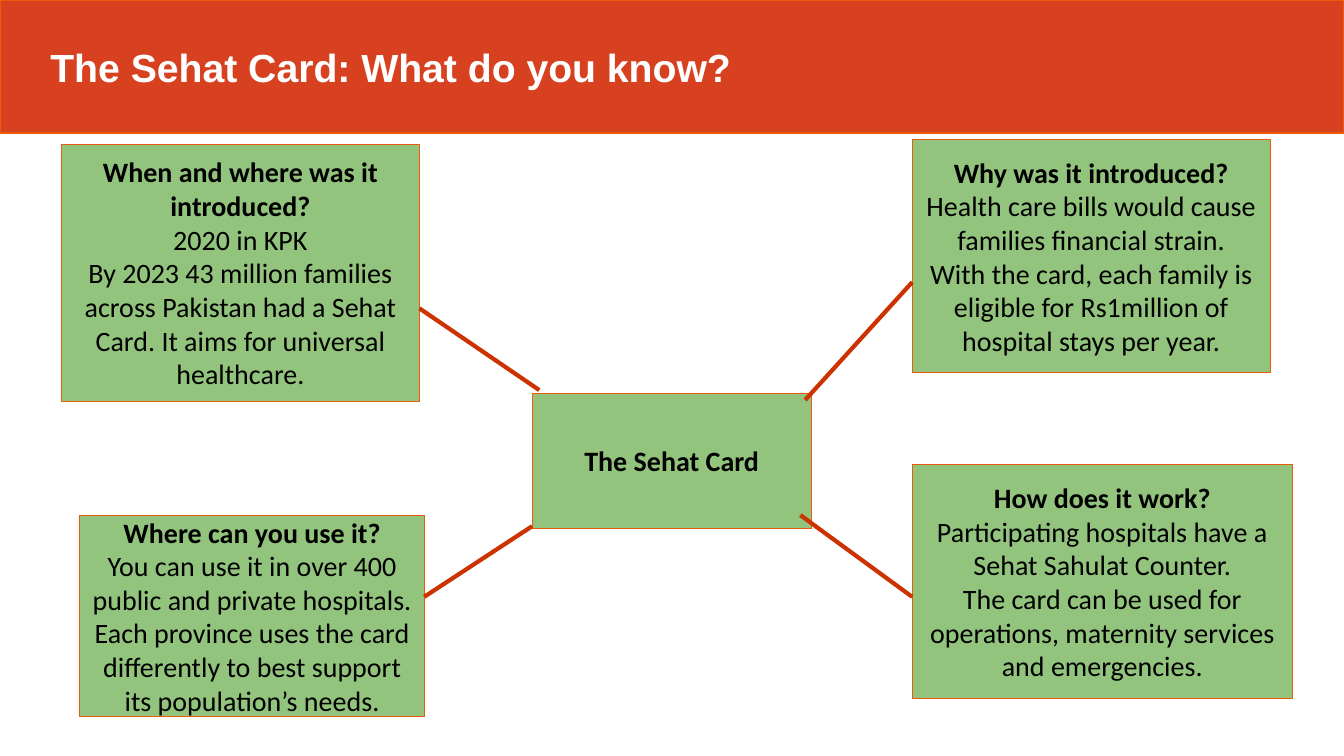
from dataclasses import dataclass

from pptx import Presentation
from pptx.dml.color import RGBColor
from pptx.enum.shapes import MSO_CONNECTOR, MSO_SHAPE
from pptx.enum.text import MSO_ANCHOR, PP_ALIGN
from pptx.oxml.ns import qn
from pptx.util import Cm, Pt


@dataclass(frozen=True)
class Theme:
    band: str = "D74120"
    card: str = "93C47D"
    edge: str = "EA5B0C"
    link: str = "CC3300"
    light: str = "FFFFFF"
    dark: str = "000000"
    head: str = "Arial"
    body: str = "Calibri"
    big: int = 28
    mid: int = 20


THEME = Theme()
WIDTH, HEIGHT = 33.87, 19.05

# Left, top, width, height in cm, then the heading and its answers
CARDS = [
    ((13.41, 9.91, 7.04, 3.4), "The Sehat Card", []),
    ((22.99, 11.71, 9.58, 5.89), "How does it work?", [
        "Participating hospitals have a Sehat Sahulat Counter.",
        "The card can be used for operations, maternity services and emergencies."]),
    ((2.01, 12.98, 8.69, 5.08), "Where can you use it?", [
        "You can use it in over 400 public and private hospitals.",
        "Each province uses the card differently to best support its population’s needs."]),
    ((22.99, 3.51, 9.02, 5.89), "Why was it introduced?", [
        "Health care bills would cause families financial strain.",
        "With the card, each family is eligible for Rs1million of hospital stays per year."]),
    ((1.55, 3.63, 9.02, 6.48), "When and where was it introduced?", [
        "2020 in KPK",
        "By 2023 43 million families across Pakistan had a Sehat Card. "
        "It aims for universal healthcare."]),
]

# From x, y to x, y in cm
LINKS = [
    (10.57, 7.77, 13.59, 9.83),
    (20.17, 12.98, 22.99, 15.04),
    (10.69, 15.04, 13.41, 13.26),
    (22.99, 7.11, 20.29, 10.08),
]


def write(para, text, *, font, size, color, bold=False, align=PP_ALIGN.CENTER):
    para.alignment = align
    run = para.add_run()
    run.text = text
    run.font.name = font
    run.font.size = Pt(size)
    run.font.bold = bold
    run.font.color.rgb = RGBColor.from_string(color)


def add_box(slide, place, fill, weight, inset):
    """Add a bordered rectangle with inset as (side, top and bottom)."""
    box = slide.shapes.add_shape(MSO_SHAPE.RECTANGLE, *map(Cm, place))
    box.shadow.inherit = False
    box.fill.solid()
    box.fill.fore_color.rgb = RGBColor.from_string(fill)
    box.line.color.rgb = RGBColor.from_string(THEME.edge)
    box.line.width = Pt(weight)
    frame = box.text_frame
    frame.word_wrap = True
    frame.vertical_anchor = MSO_ANCHOR.MIDDLE
    frame.margin_left = frame.margin_right = Cm(inset[0])
    frame.margin_top = frame.margin_bottom = Cm(inset[1])
    return frame


def add_title(slide, text):
    frame = add_box(slide, (0, 0, WIDTH, 3.35), THEME.band, 1, (1.27, 0.13))
    write(frame.paragraphs[0], text, font=THEME.head, size=THEME.big,
          color=THEME.light, bold=True, align=PP_ALIGN.LEFT)


def add_card(slide, place, head, facts):
    frame = add_box(slide, place, THEME.card, 0.75, (0.25, 0.25))
    style = dict(font=THEME.body, size=THEME.mid, color=THEME.dark)
    write(frame.paragraphs[0], head, bold=True, **style)
    for fact in facts:
        write(frame.add_paragraph(), fact, **style)


def add_link(slide, ends):
    link = slide.shapes.add_connector(MSO_CONNECTOR.STRAIGHT, *map(Cm, ends))
    link.line.color.rgb = RGBColor.from_string(THEME.link)
    link.line.width = Pt(3)
    props = link._element.spPr
    props.append(props.makeelement(qn("a:effectLst"), {}))


def main():
    deck = Presentation()
    deck.slide_width, deck.slide_height = Cm(WIDTH), Cm(HEIGHT)
    slide = deck.slides.add_slide(deck.slide_layouts[6])
    add_title(slide, "The Sehat Card: What do you know?")
    for place, head, facts in CARDS:
        add_card(slide, place, head, facts)
    for ends in LINKS:
        add_link(slide, ends)
    deck.save("out.pptx")


if __name__ == "__main__":
    main()
